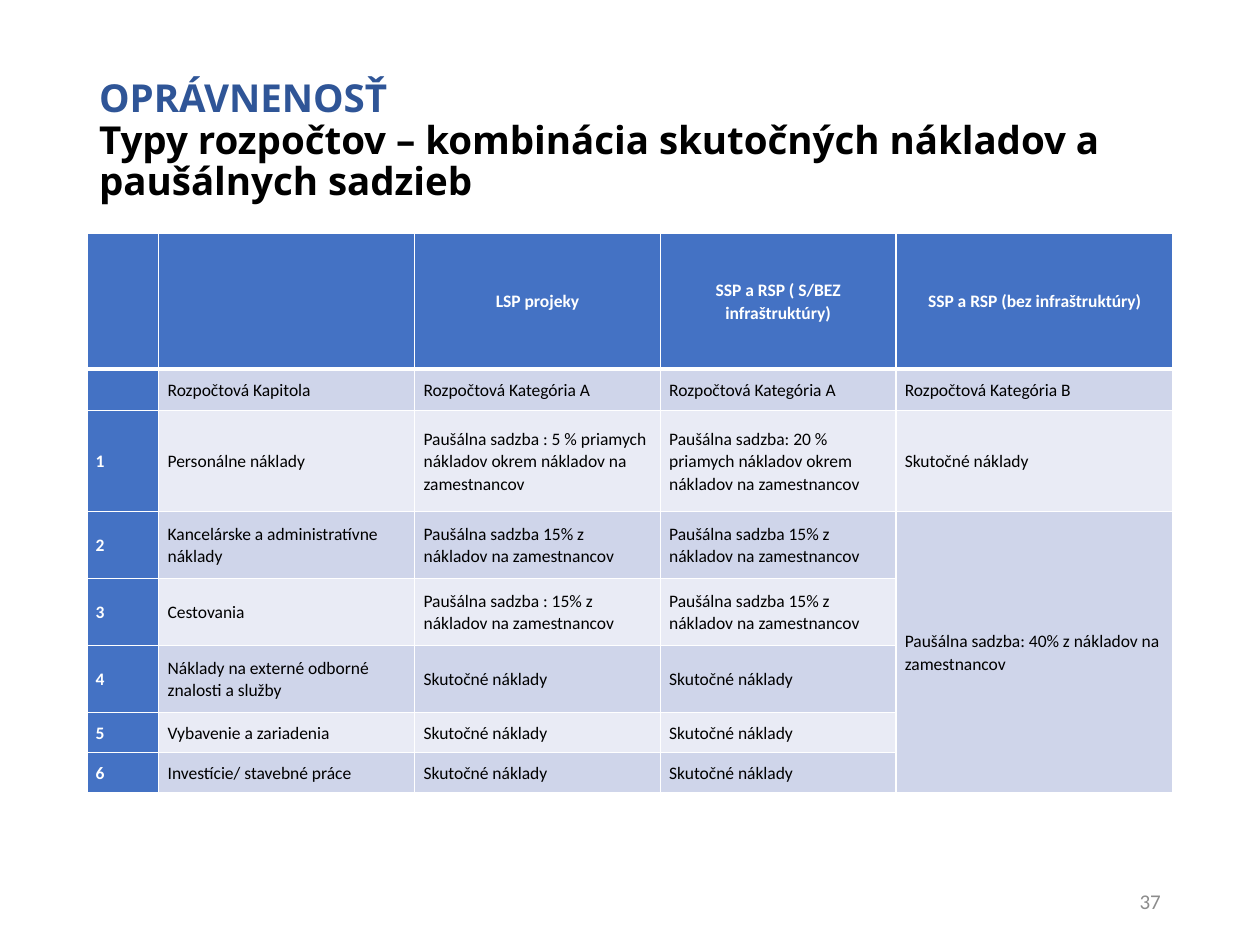
"""Build the slide on budget types combining real costs and flat rates."""
from lxml.etree import SubElement
from pptx import Presentation
from pptx.dml.color import RGBColor
from pptx.enum.text import MSO_ANCHOR, PP_ALIGN
from pptx.oxml.ns import qn
from pptx.util import Cm, Pt

BLACK = RGBColor(0x00, 0x00, 0x00)
WHITE = RGBColor(0xFF, 0xFF, 0xFF)
HEADING_BLUE = RGBColor(0x2F, 0x55, 0x97)
HEADER_BLUE = RGBColor(0x44, 0x72, 0xC4)
BAND_DARK = RGBColor(0xCF, 0xD5, 0xEA)
BAND_LIGHT = RGBColor(0xE9, 0xEB, 0xF5)
GRAY = RGBColor(0x8C, 0x8C, 0x8C)

ACTUAL = "Skutočné náklady"
FLAT_15 = "Paušálna sadzba 15% z nákladov na zamestnancov"
CATEGORY_A = "Rozpočtová Kategória A"

budget_rows = [
    ("", "", "LSP projeky", "SSP a RSP ( S/BEZ infraštruktúry)", "SSP a RSP (bez infraštruktúry)"),
    ("", "Rozpočtová Kapitola", CATEGORY_A, CATEGORY_A, "Rozpočtová Kategória B"),
    ("1", "Personálne náklady",
     "Paušálna sadzba : 5 % priamych nákladov okrem nákladov na zamestnancov",
     "Paušálna sadzba: 20 % priamych nákladov okrem nákladov na zamestnancov", ACTUAL),
    ("2", "Kancelárske a administratívne náklady", FLAT_15, FLAT_15,
     "Paušálna sadzba: 40% z nákladov na zamestnancov"),
    ("3", "Cestovania", "Paušálna sadzba : 15% z nákladov na zamestnancov", FLAT_15, ""),
    ("4", "Náklady na externé odborné znalosti a služby", ACTUAL, ACTUAL, ""),
    ("5", "Vybavenie a zariadenia", ACTUAL, ACTUAL, ""),
    ("6", "Investície/ stavebné práce", ACTUAL, ACTUAL, ""),
]
column_widths = [1.45, 5.16, 4.95, 4.75, 5.59]
row_heights = [2.74, 0.84, 2.03, 1.35, 1.35, 1.35, 0.81, 0.81]


def set_font(paragraph, name, size, color=None, bold=False):
    paragraph.font.name = name
    paragraph.font.size = Pt(size)
    paragraph.font.bold = bold
    if color is not None:
        paragraph.font.color.rgb = color


def add_border(cell, side, width):
    line = SubElement(cell._tc.get_or_add_tcPr(), qn(f"a:{side}"), w=str(Pt(width)))
    fill = SubElement(line, qn("a:solidFill"))
    SubElement(fill, qn("a:srgbClr"), val=str(WHITE))


prs = Presentation()
prs.slide_width, prs.slide_height = Cm(25.4), Cm(19.05)
slide = prs.slides.add_slide(prs.slide_layouts[6])

heading = slide.shapes.add_textbox(Cm(1.75), Cm(1.02), Cm(21.9), Cm(3.68)).text_frame
heading.word_wrap = True
heading.vertical_anchor = MSO_ANCHOR.MIDDLE
title = heading.paragraphs[0]
title.line_spacing = 0.9
set_font(title, "Open Sans", 22, bold=True)
topic = title.add_run()
topic.text = "OPRÁVNENOSŤ"
topic.font.color.rgb = HEADING_BLUE
title.add_line_break()
subtitle = title.add_run()
subtitle.text = "Typy rozpočtov – kombinácia skutočných nákladov a paušálnych sadzieb"
subtitle.font.color.rgb = BLACK

budget = slide.shapes.add_table(
    len(row_heights), len(column_widths), Cm(1.75), Cm(4.7),
    Cm(sum(column_widths)), Cm(sum(row_heights))).table
for column, width in zip(budget.columns, column_widths):
    column.width = Cm(width)
for row, height in zip(budget.rows, row_heights):
    row.height = Cm(height)

for r, texts in enumerate(budget_rows):
    for c, text in enumerate(texts):
        cell = budget.cell(r, c)
        is_header = r == 0 or c == 0
        add_border(cell, "lnL", 1)
        add_border(cell, "lnR", 1)
        add_border(cell, "lnT", 3 if r == 1 else 1)
        add_border(cell, "lnB", 3 if r == 0 else 1)
        cell.fill.solid()
        band = BAND_DARK if r % 2 else BAND_LIGHT
        cell.fill.fore_color.rgb = HEADER_BLUE if is_header else band
        cell.vertical_anchor = MSO_ANCHOR.MIDDLE
        cell.margin_left = cell.margin_right = Cm(0.18)
        cell.margin_top = cell.margin_bottom = 0
        entry = cell.text_frame.paragraphs[0]
        set_font(entry, "Calibri", 10, WHITE if is_header else BLACK, is_header)
        if text:
            entry.text = text
            entry.line_spacing = 1.07
            entry.space_after = Pt(8)
            entry.alignment = PP_ALIGN.CENTER if r == 0 else PP_ALIGN.LEFT
budget.cell(3, 4).merge(budget.cell(7, 4))

footer = slide.shapes.add_textbox(Cm(17.93), Cm(17.65), Cm(5.72), Cm(1.02)).text_frame
footer.word_wrap = True
footer.vertical_anchor = MSO_ANCHOR.MIDDLE
page_number = footer.paragraphs[0]
page_number.text = "37"
page_number.alignment = PP_ALIGN.RIGHT
set_font(page_number, "Calibri", 12, GRAY)

prs.save("out.pptx")
